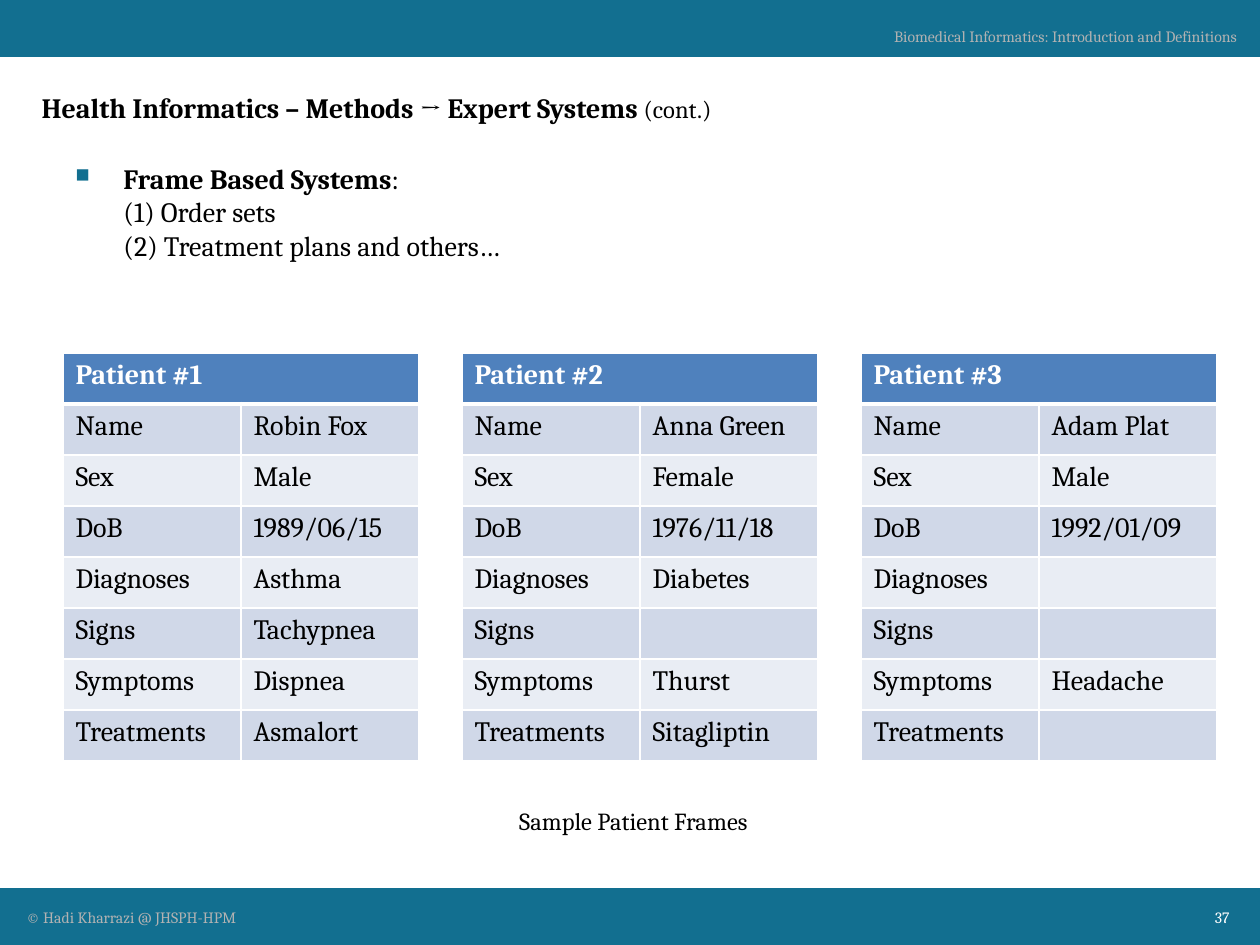
"""Build a slide showing three sample patient frames as tables."""
from lxml import etree
from pptx import Presentation
from pptx.dml.color import RGBColor
from pptx.enum.shapes import MSO_SHAPE
from pptx.enum.text import MSO_ANCHOR, MSO_AUTO_SIZE, PP_ALIGN
from pptx.oxml.ns import qn
from pptx.util import Emu, Pt

LEFT, CENTER, RIGHT = PP_ALIGN.LEFT, PP_ALIGN.CENTER, PP_ALIGN.RIGHT
TOP, MIDDLE = MSO_ANCHOR.TOP, MSO_ANCHOR.MIDDLE
FONT = "Cambria"
TEAL, GREY, WHITE, BLACK = "126F90", "B2B2B2", "FFFFFF", "000000"
HEADER_BLUE, BANDS = "4F81BD", ("D0D8E8", "E9EDF4")

PAGE_WIDTH, PAGE_HEIGHT, BAR_HEIGHT = 1260, 945, 57
TABLE_LEFT, TABLE_TOP, TABLE_STEP = 63, 353, 399
COLUMN_WIDTH, ROW_HEIGHT = 178, 51

TITLE = [("Health Informatics – Methods → Expert Systems", 16, True),
         (" (cont.)", 14, False)]
SYSTEMS = [[("Frame Based Systems", 16, True), (":", 16, False)],
           [("(1) Order sets", 16, False)],
           [("(2) Treatment plans and others…", 16, False)]]
LABELS = [
    ("© Hadi Kharrazi @ JHSPH-HPM", (14, 902, 796, 31), 9, GREY, LEFT),
    ("Biomedical Informatics: Introduction and Definitions",
     (847, 21, 402, 31), 9, GREY, RIGHT),
    ("Sample Patient Frames", (93, 800, 1081, 43), 14, BLACK, CENTER),
    ("37", (1160, 902, 82, 31), 9, WHITE, RIGHT),
]
FIELDS = ["Name", "Sex", "DoB", "Diagnoses", "Signs", "Symptoms", "Treatments"]
PATIENTS = [
    ("Patient #1", ["Robin Fox", "Male", "1989/06/15", "Asthma",
                    "Tachypnea", "Dispnea", "Asmalort"]),
    ("Patient #2", ["Anna Green", "Female", "1976/11/18", "Diabetes",
                    "", "Thurst", "Sitagliptin"]),
    ("Patient #3", ["Adam Plat", "Male", "1992/01/09", "",
                    "", "Headache", ""]),
]


def px(length):
    return Emu(round(length * 914400 / 126))


def color(value):
    return RGBColor.from_string(value)


def add_span(para, text, size, bold=False, ink=BLACK):
    span = para.add_run()
    span.text = text
    font = span.font
    font.name, font.size, font.bold = FONT, Pt(size), bold
    font.color.rgb = color(ink)


def add_box(page, place):
    box = page.shapes.add_textbox(*map(px, place))
    box.text_frame.word_wrap = True
    return box.text_frame


def add_bar(page, top):
    bar = page.shapes.add_shape(MSO_SHAPE.RECTANGLE, 0, px(top),
                                px(PAGE_WIDTH), px(BAR_HEIGHT))
    bar.shadow.inherit = False
    bar.fill.solid()
    bar.fill.fore_color.rgb = color(TEAL)
    bar.line.fill.background()


def add_title(page):
    title = page.shapes.title
    title.left, title.top, title.width, title.height = map(px, (29, 78, 1211, 58))
    frame = title.text_frame
    frame.word_wrap, frame.auto_size = True, MSO_AUTO_SIZE.NONE
    frame.vertical_anchor = MIDDLE
    para = frame.paragraphs[0]
    para.alignment = LEFT
    for text, size, bold in TITLE:
        add_span(para, text, size, bold)


def add_systems(page):
    para = add_box(page, (63, 155, 1124, 120)).paragraphs[0]
    props = para._p.get_or_add_pPr()
    props.set("marL", str(px(48)))
    props.set("indent", str(px(-48)))
    tint = etree.SubElement(props, qn("a:buClr"))
    etree.SubElement(tint, qn("a:srgbClr"), val=TEAL)
    etree.SubElement(props, qn("a:buSzPct"), val="70000")
    etree.SubElement(props, qn("a:buChar"), char="■")
    for index, line in enumerate(SYSTEMS):
        if index:
            para.add_line_break()
        for text, size, bold in line:
            add_span(para, text, size, bold)


def style_cell(cell, fill, bottom=1):
    cell.vertical_anchor = TOP
    cell.fill.solid()
    cell.fill.fore_color.rgb = color(fill)
    props = cell._tc.get_or_add_tcPr()
    edges = (("a:lnL", 1), ("a:lnR", 1), ("a:lnT", 1), ("a:lnB", bottom))
    for index, (tag, width) in enumerate(edges):
        edge = etree.Element(qn(tag), w=str(Pt(width)))
        solid = etree.SubElement(edge, qn("a:solidFill"))
        etree.SubElement(solid, qn("a:srgbClr"), val=WHITE)
        props.insert(index, edge)


def add_patient(page, left, heading, values):
    count = len(FIELDS) + 1
    table = page.shapes.add_table(count, 2, px(left), px(TABLE_TOP),
                                  px(2 * COLUMN_WIDTH), px(count * ROW_HEIGHT)).table
    for column in table.columns:
        column.width = px(COLUMN_WIDTH)
    for row in table.rows:
        row.height = px(ROW_HEIGHT)
    header = table.cell(0, 0)
    header.merge(table.cell(0, 1))
    add_span(header.text_frame.paragraphs[0], heading, 16, True, WHITE)
    for column in range(2):
        style_cell(table.cell(0, column), HEADER_BLUE, 3)
    for row, pair in enumerate(zip(FIELDS, values), 1):
        for column, text in enumerate(pair):
            cell = table.cell(row, column)
            style_cell(cell, BANDS[(row - 1) % 2])
            if text:
                add_span(cell.text_frame.paragraphs[0], text, 16)


def main():
    deck = Presentation()
    deck.slide_width, deck.slide_height = px(PAGE_WIDTH), px(PAGE_HEIGHT)
    page = deck.slides.add_slide(deck.slide_layouts[5])
    for top in (0, PAGE_HEIGHT - BAR_HEIGHT):
        add_bar(page, top)
    add_title(page)
    add_systems(page)
    for index, (heading, values) in enumerate(PATIENTS):
        add_patient(page, TABLE_LEFT + index * TABLE_STEP, heading, values)
    for text, place, size, ink, align in LABELS:
        para = add_box(page, place).paragraphs[0]
        para.alignment = align
        add_span(para, text, size, ink=ink)
    deck.save("out.pptx")


if __name__ == "__main__":
    main()
